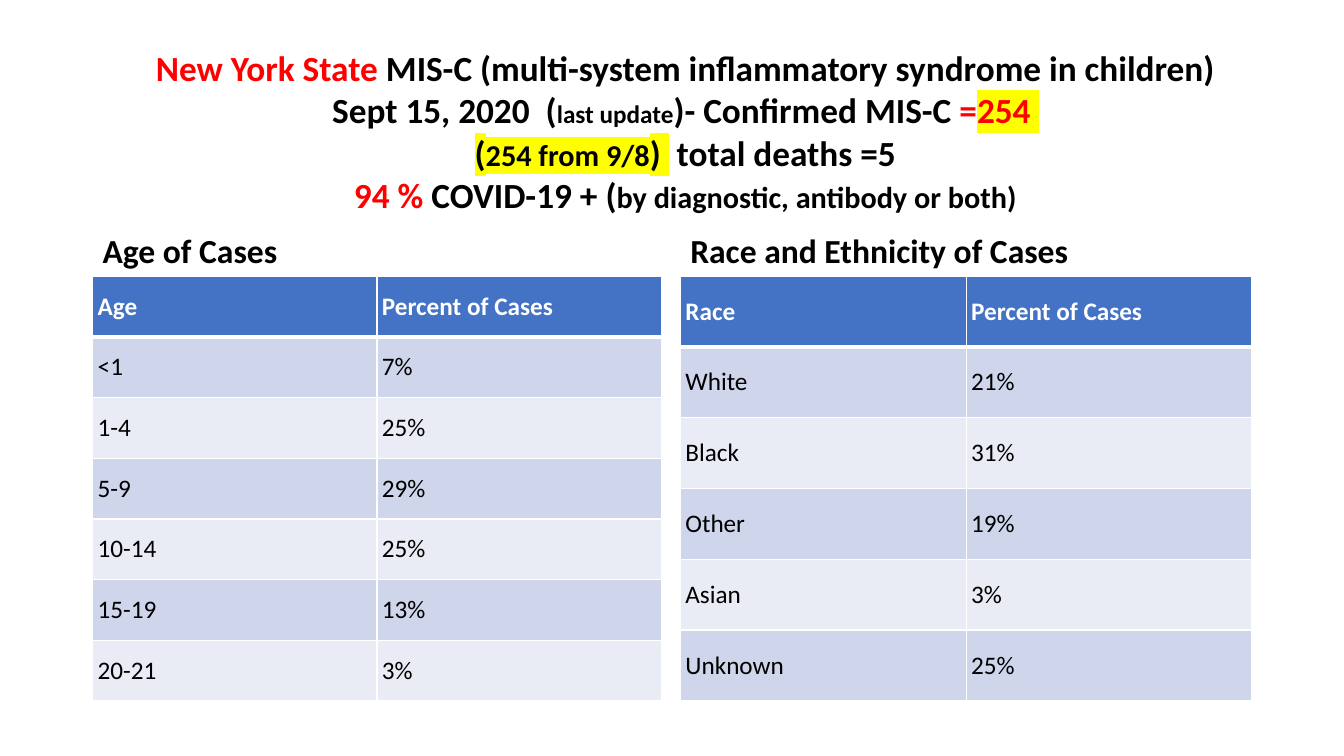
from dataclasses import dataclass

from lxml.etree import SubElement
from pptx import Presentation
from pptx.dml.color import RGBColor
from pptx.enum.text import MSO_ANCHOR, PP_ALIGN
from pptx.oxml.ns import qn
from pptx.util import Pt


@dataclass(frozen=True)
class Theme:
    font: str = "Calibri"
    black: str = "000000"
    white: str = "FFFFFF"
    red: str = "FF0000"
    yellow: str = "FFFF00"
    header: str = "4472C4"
    bands: tuple = ("CFD5EA", "E9EBF5")
    title: float = 25.2
    title_note: float = 21.6
    title_small: float = 18
    heading: float = 24
    cell: float = 18


THEME = Theme()

# Each title line is a list of (text, size, colour, highlight).
TITLE_LINES = [
    [("New York State", THEME.title, THEME.red, None),
     (" MIS-C (multi-system inflammatory syndrome in children)",
      THEME.title, THEME.black, None)],
    [("Sept 15, 2020  (", THEME.title, THEME.black, None),
     ("last update", THEME.title_small, THEME.black, None),
     (")- Confirmed MIS-C ", THEME.title, THEME.black, None),
     ("=", THEME.title, THEME.red, None),
     ("254 ", THEME.title, THEME.red, THEME.yellow)],
    [("(", THEME.title, THEME.black, THEME.yellow),
     ("254 from 9/8", THEME.title_note, THEME.black, THEME.yellow),
     (") ", THEME.title, THEME.black, THEME.yellow),
     (" total deaths =5", THEME.title, THEME.black, None)],
    [("94 % ", THEME.title, THEME.red, None),
     ("COVID-19 + (", THEME.title, THEME.black, None),
     ("by diagnostic, antibody or both)", THEME.title_note, THEME.black, None)],
]

AGE_ROWS = [
    ("Age", "Percent of Cases"),
    ("<1", "7%"),
    ("1-4", "25%"),
    ("5-9", "29%"),
    ("10-14", "25%"),
    ("15-19", "13%"),
    ("20-21", "3%"),
]

RACE_ROWS = [
    ("Race", "Percent of Cases"),
    ("White", "21%"),
    ("Black", "31%"),
    ("Other", "19%"),
    ("Asian", "3%"),
    ("Unknown", "25%"),
]

HEADING_TOP, HEADING_HEIGHT = 132.5, 64.8
TABLE_TOP, TABLE_HEIGHT = 197.3, 303.4


def add_run(p, text, size, color, bold=True, highlight=None):
    r = p.add_run()
    r.text = text
    r.font.size = Pt(size)
    r.font.bold = bold
    r.font.color.rgb = RGBColor.from_string(color)
    if highlight:
        mark = SubElement(r.font._element, qn("a:highlight"))
        SubElement(mark, qn("a:srgbClr"), val=highlight)
    r.font.name = THEME.font


def add_text_box(s, left, top, width, height, anchor):
    tf = s.shapes.add_textbox(Pt(left), Pt(top), Pt(width), Pt(height)).text_frame
    tf.word_wrap = True
    tf.vertical_anchor = anchor
    return tf


def add_title(s):
    tf = add_text_box(s, 72, 28.8, 835.2, 129.6, MSO_ANCHOR.MIDDLE)
    for i, line in enumerate(TITLE_LINES):
        p = tf.add_paragraph() if i else tf.paragraphs[0]
        p.alignment = PP_ALIGN.CENTER
        for text, size, color, highlight in line:
            add_run(p, text, size, color, highlight=highlight)


def add_heading(s, text, left, width):
    tf = add_text_box(s, left, HEADING_TOP, width, HEADING_HEIGHT, MSO_ANCHOR.BOTTOM)
    p = tf.paragraphs[0]
    p.line_spacing = 0.9
    add_run(p, text, THEME.heading, THEME.black)


def set_borders(cell, top, bottom):
    """Draw white cell edges; top and bottom are widths in points."""
    tc_pr = cell._tc.get_or_add_tcPr()
    for side, width in (("L", 1), ("R", 1), ("T", top), ("B", bottom)):
        ln = SubElement(tc_pr, qn(f"a:ln{side}"), w=str(Pt(width)))
        fill = SubElement(ln, qn("a:solidFill"))
        SubElement(fill, qn("a:srgbClr"), val=THEME.white)


def fill_cell(cell, text, row):
    is_header = row == 0
    set_borders(cell, top=3 if row == 1 else 1, bottom=3 if is_header else 1)
    cell.fill.solid()
    color = THEME.header if is_header else THEME.bands[(row - 1) % 2]
    cell.fill.fore_color.rgb = RGBColor.from_string(color)
    cell.vertical_anchor = MSO_ANCHOR.MIDDLE
    cell.margin_left = cell.margin_right = Pt(3.6)
    cell.margin_top = cell.margin_bottom = Pt(2.9)
    add_run(cell.text_frame.paragraphs[0], text, THEME.cell,
            THEME.white if is_header else THEME.black, bold=is_header)


def add_case_table(s, rows, left, width):
    table = s.shapes.add_table(len(rows), len(rows[0]), Pt(left), Pt(TABLE_TOP),
                               Pt(width), Pt(TABLE_HEIGHT)).table
    for i, values in enumerate(rows):
        table.rows[i].height = Pt(TABLE_HEIGHT / len(rows))
        for j, text in enumerate(values):
            fill_cell(table.cell(i, j), text, i)


def main():
    prs = Presentation()
    prs.slide_width, prs.slide_height = Pt(960), Pt(540)
    s = prs.slides.add_slide(prs.slide_layouts[6])
    add_title(s)
    for heading, rows, left, width in (
        ("Age of Cases", AGE_ROWS, 66.2, 406.1),
        ("Race and Ethnicity of Cases", RACE_ROWS, 486, 408.2),
    ):
        add_heading(s, heading, left, width)
        add_case_table(s, rows, left, width)
    prs.save("out.pptx")


if __name__ == "__main__":
    main()
